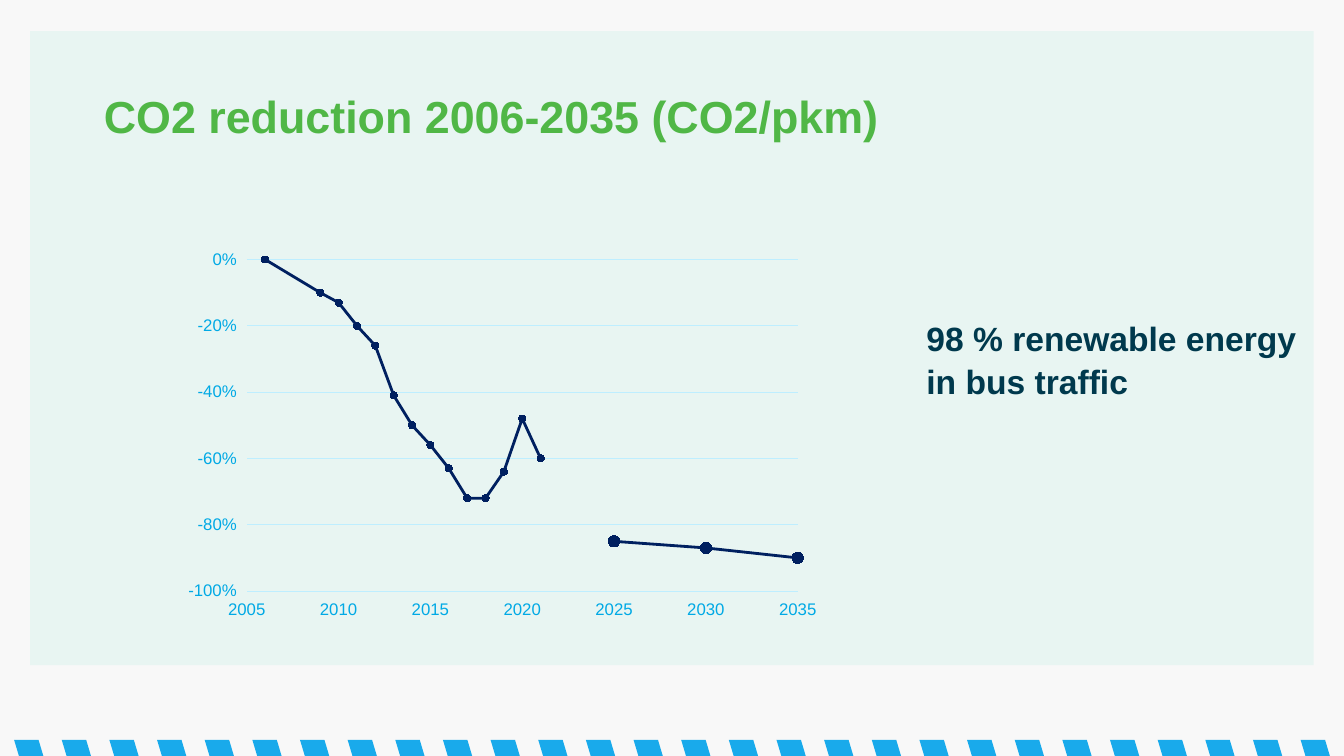
from dataclasses import dataclass

from lxml import etree
from pptx import Presentation
from pptx.chart.data import XyChartData
from pptx.dml.color import RGBColor
from pptx.enum.chart import XL_CHART_TYPE, XL_MARKER_STYLE, XL_TICK_LABEL_POSITION, XL_TICK_MARK
from pptx.enum.shapes import MSO_SHAPE
from pptx.enum.text import MSO_ANCHOR
from pptx.oxml.ns import qn
from pptx.util import Inches, Pt

SCATTER = XL_CHART_TYPE.XY_SCATTER_LINES
CIRCLE = XL_MARKER_STYLE.CIRCLE
LABELS_LOW = XL_TICK_LABEL_POSITION.LOW
NO_TICK = XL_TICK_MARK.NONE
RECTANGLE = MSO_SHAPE.RECTANGLE
PARALLELOGRAM = MSO_SHAPE.PARALLELOGRAM
MIDDLE, TOP = MSO_ANCHOR.MIDDLE, MSO_ANCHOR.TOP

TITLE = "CO2 reduction 2006-2035 (CO2/pkm)"
MESSAGE = "98 % renewable energy in bus traffic"
REDUCTION = [
    (2005, None), (2006, 0), (2009, -0.1), (2010, -0.13), (2011, -0.2),
    (2012, -0.26), (2013, -0.41), (2014, -0.5), (2015, -0.56), (2016, -0.63),
    (2017, -0.72), (2018, -0.72), (2019, -0.64), (2020, -0.48), (2021, -0.6),
    (2022, None), (2023, None), (2024, None),
    (2025, -0.85), (2030, -0.87), (2035, -0.9),
]
FIRST_TARGET_YEAR = 2025
PLOT_AREA = {"x": 0.179, "y": 0.177, "w": 0.69, "h": 0.706}
STRIPE_COUNT = 28
STRIPE_START, STRIPE_END = 0.14, 12.9


@dataclass(frozen=True)
class Theme:
    font: str = "Arial"
    background: str = "F8F8F8"
    panel: str = "E8F5F2"
    stripe: str = "19AAEB"
    title: str = "50B746"
    text: str = "00394D"
    axis: str = "00A9E5"
    grid: str = "BEEEFF"
    series: str = "002060"
    target: str = "00B050"
    title_size: int = 32
    message_size: int = 24
    axis_size: int = 12
    chart_size: int = 10


THEME = Theme()


def rgb(value):
    return RGBColor.from_string(value)


def paint(fill, color):
    fill.solid()
    fill.fore_color.rgb = rgb(color)


def set_font(font, size, color, bold=False):
    font.name, font.size, font.bold = THEME.font, Pt(size), bold
    font.color.rgb = rgb(color)


def set_line(line, color, width):
    paint(line.fill, color)
    line.width = Pt(width)


def write_text(frame, text, *, size, color, anchor, margins=None, spacing=1.0):
    frame.word_wrap = True
    frame.vertical_anchor = anchor
    if margins is not None:
        frame.margin_left = frame.margin_right = Inches(margins)
        frame.margin_top = frame.margin_bottom = Inches(margins)
    frame.text = text
    para = frame.paragraphs[0]
    para.line_spacing = spacing
    set_font(para.runs[0].font, size, color, bold=True)


def add_block(page, kind, left, top, width, height, color):
    block = page.shapes.add_shape(kind, Inches(left), Inches(top), Inches(width), Inches(height))
    block.shadow.inherit = False
    paint(block.fill, color)
    block.line.fill.background()
    return block


def add_backdrop(page):
    paint(page.background.fill, THEME.background)
    step = (STRIPE_END - STRIPE_START) / (STRIPE_COUNT - 1)
    for index in range(STRIPE_COUNT):
        stripe = add_block(page, PARALLELOGRAM, STRIPE_START + index * step, 7.34, 0.29, 0.16, THEME.stripe)
        stripe.adjustments[0] = 0.3
        stripe.element.spPr.find(qn("a:xfrm")).set("flipH", "1")
    return add_block(page, RECTANGLE, 0.3, 0.31, 12.73, 6.29, THEME.panel)


def fix_plot_area(chart):
    """Pin the inner plot area to fractions of the chart frame."""
    plot_area = chart.element.find(qn("c:chart")).find(qn("c:plotArea"))
    layout = plot_area.find(qn("c:layout"))
    if layout is None:
        layout = etree.Element(qn("c:layout"))
        plot_area.insert(0, layout)
    manual = etree.SubElement(layout, qn("c:manualLayout"))
    settings = {"layoutTarget": "inner", "xMode": "edge", "yMode": "edge", **PLOT_AREA}
    for name, value in settings.items():
        etree.SubElement(manual, qn(f"c:{name}")).set("val", str(value))


def format_axis(axis, low, high, step):
    axis.minimum_scale, axis.maximum_scale, axis.major_unit = low, high, step
    axis.major_tick_mark = axis.minor_tick_mark = NO_TICK
    axis.tick_label_position = LABELS_LOW
    set_font(axis.tick_labels.font, THEME.axis_size, THEME.axis)


def format_marker(marker, size, color):
    marker.style, marker.size = CIRCLE, size
    paint(marker.format.fill, color)
    paint(marker.format.line.fill, color)


def add_reduction_chart(page):
    data = XyChartData(number_format="0%")
    reduction = data.add_series("Series 1")
    for year, change in REDUCTION:
        reduction.add_data_point(year, change)
    frame = page.shapes.add_chart(SCATTER, Inches(1.03), Inches(1.75), Inches(7.92), Inches(4.66), data)
    chart = frame.chart
    chart.has_title = chart.has_legend = False
    set_font(chart.font, THEME.chart_size, THEME.text)
    fix_plot_area(chart)

    years, changes = chart.category_axis, chart.value_axis
    format_axis(years, 2005, 2035, 5)
    years.has_major_gridlines = False
    years.tick_labels.number_format = "0"
    years.tick_labels.number_format_is_linked = False
    set_line(years.format.line, THEME.grid, 0.75)
    format_axis(changes, -1, 0, 0.2)
    changes.has_major_gridlines = True
    changes.tick_labels.number_format = "0%"
    changes.tick_labels.number_format_is_linked = False
    changes.format.line.fill.background()
    set_line(changes.major_gridlines.format.line, THEME.grid, 0.75)

    chart.plots[0].vary_by_categories = False
    series = chart.plots[0].series[0]
    series.smooth = False
    set_line(series.format.line, THEME.series, 2)
    format_marker(series.marker, 5, THEME.series)
    for index, (year, _) in enumerate(REDUCTION):
        if year >= FIRST_TARGET_YEAR:
            point = series.points[index]
            format_marker(point.marker, 8, THEME.target)
            set_line(point.format.line, THEME.series, 2)


def main():
    deck = Presentation()
    deck.slide_width, deck.slide_height = Inches(13.33), Inches(7.5)
    page = deck.slides.add_slide(deck.slide_layouts[5])
    panel = add_backdrop(page)

    title = page.shapes.title
    panel.element.addnext(title.element)
    title.left, title.top, title.width, title.height = Inches(1.03), Inches(0.86), Inches(11.24), Inches(0.58)
    write_text(title.text_frame, TITLE, size=THEME.title_size, color=THEME.title, anchor=MIDDLE, margins=0)
    title.text_frame.paragraphs[0].alignment = 1

    add_reduction_chart(page)
    message = page.shapes.add_textbox(Inches(9.09), Inches(3.08), Inches(3.94), Inches(0.91))
    write_text(message.text_frame, MESSAGE, size=THEME.message_size, color=THEME.text, anchor=TOP, spacing=1.06)
    deck.save("out.pptx")


if __name__ == "__main__":
    main()
